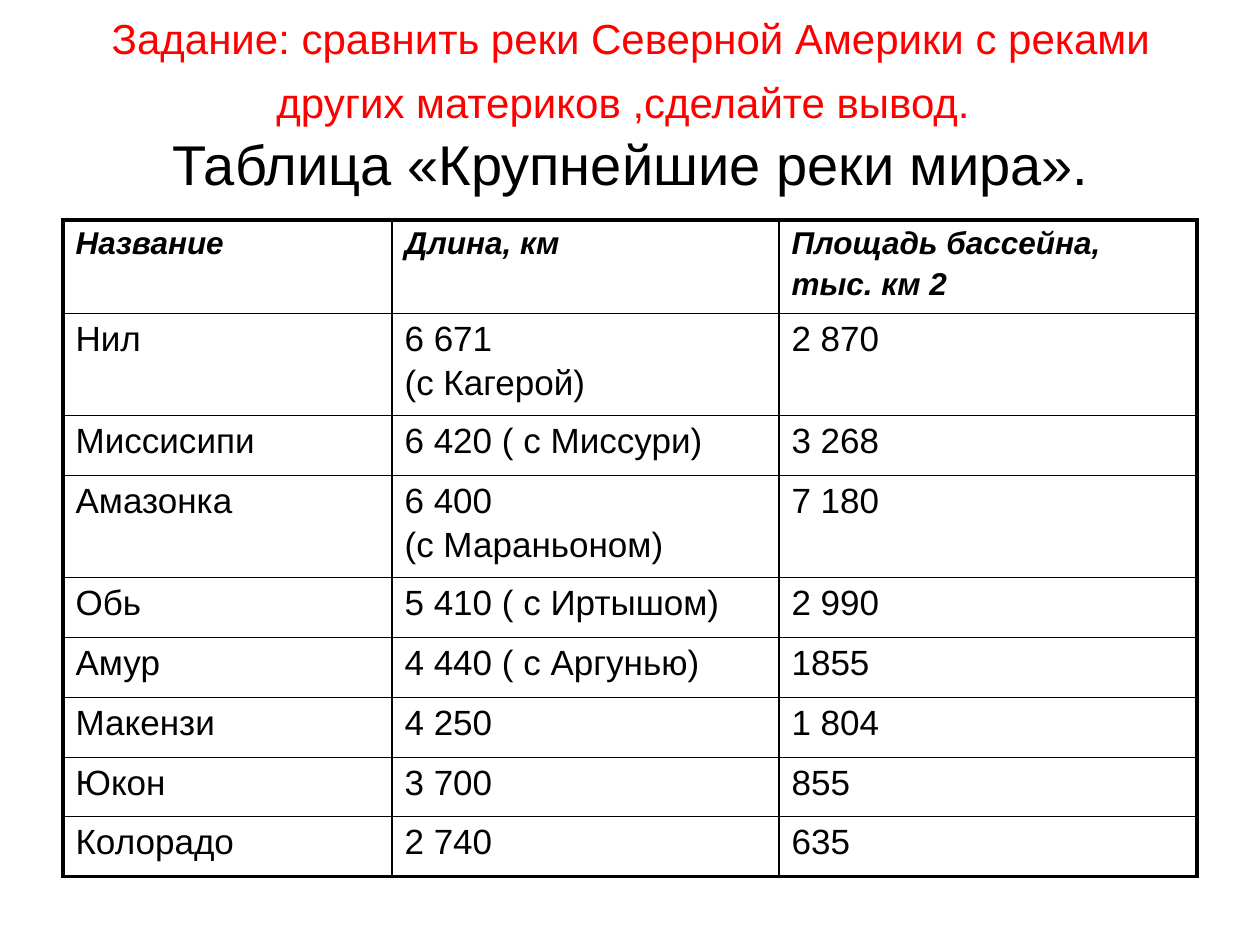
from lxml import etree
from pptx import Presentation
from pptx.dml.color import RGBColor
from pptx.enum.text import MSO_ANCHOR, PP_ALIGN
from pptx.oxml.ns import qn
from pptx.util import Emu, Pt

MIDDLE = MSO_ANCHOR.MIDDLE
CENTER = PP_ALIGN.CENTER
SCALE = 914400 / 126
FONT = "Arial"
BLACK = "000000"
RED = "FF0000"
THIN, THICK = 1, 2.25
COLS = [329, 387, 418]
HEIGHTS = [90, 97, 60, 98, 60, 60, 60, 59, 60]
RIVERS = [
    ["Название", "Длина, км", "Площадь бассейна,\nтыс. км 2"],
    ["Нил", "6 671\n(с Кагерой)", "2 870"],
    ["Миссисипи", "6 420 ( с Миссури)", "3 268"],
    ["Амазонка", "6 400\n(с Мараньоном)", "7 180"],
    ["Обь", "5 410 ( с Иртышом)", "2 990"],
    ["Амур", "4 440 ( с Аргунью)", "1855"],
    ["Макензи", "4 250", "1 804"],
    ["Юкон", "3 700", "855"],
    ["Колорадо", "2 740", "635"],
]


def px(count):
    """Turn pixels into EMU."""
    return Emu(round(count * SCALE))


def color(code):
    """Turn a hex string into a colour."""
    return RGBColor.from_string(code)


def add_run(para, text, size, code=BLACK, strong=False):
    """Add one styled run to a paragraph."""
    run = para.add_run()
    run.text = text
    font = run.font
    font.name, font.size = FONT, Pt(size)
    font.bold = font.italic = strong
    font.color.rgb = color(code)


def add_title(slide):
    """Add the task and the table heading."""
    frame = slide.shapes.add_textbox(px(64), px(26), px(1134), px(157)).text_frame
    frame.word_wrap = True
    frame.vertical_anchor = MIDDLE
    para = frame.paragraphs[0]
    para.alignment = CENTER
    task = "Задание: сравнить реки Северной Америки с реками других материков ,сделайте вывод."
    add_run(para, task, 24, RED)
    add_run(para, " ", 32, RED)
    para.add_line_break()
    add_run(para, "Таблица «Крупнейшие реки мира».", 32)


def add_edge(cell, side, width):
    """Draw one border of a cell."""
    props = cell._tc.get_or_add_tcPr()
    line = etree.SubElement(props, qn(f"a:ln{side}"), w=str(Pt(width)))
    fill = etree.SubElement(line, qn("a:solidFill"))
    etree.SubElement(fill, qn("a:srgbClr"), val=BLACK)


def fill_cell(cell, text, head):
    """Write the lines of a cell."""
    frame = cell.text_frame
    for index, line in enumerate(text.split("\n")):
        para = frame.add_paragraph() if index else frame.paragraphs[0]
        if index:
            para.space_before = Pt(3)
        add_run(para, line, 18 if head else 20, strong=head)


def add_rivers(slide):
    """Add the table of rivers with a thick frame."""
    rows, cols = len(RIVERS), len(COLS)
    shape = slide.shapes.add_table(rows, cols, px(63), px(220), px(sum(COLS)), px(sum(HEIGHTS)))
    table = shape.table
    for col, width in zip(table.columns, COLS):
        col.width = px(width)
    for row, height in zip(table.rows, HEIGHTS):
        row.height = px(height)
    for r, texts in enumerate(RIVERS):
        for c, text in enumerate(texts):
            cell = table.cell(r, c)
            outer = {"L": c == 0, "R": c == cols - 1, "T": r == 0, "B": r == rows - 1}
            for side, thick in outer.items():
                add_edge(cell, side, THICK if thick else THIN)
            cell.fill.background()
            fill_cell(cell, text, r == 0)


def main():
    """Build and save the slide."""
    deck = Presentation()
    deck.slide_width, deck.slide_height = px(1260), px(945)
    slide = deck.slides.add_slide(deck.slide_layouts[6])
    add_title(slide)
    add_rivers(slide)
    deck.save("out.pptx")


if __name__ == "__main__":
    main()
